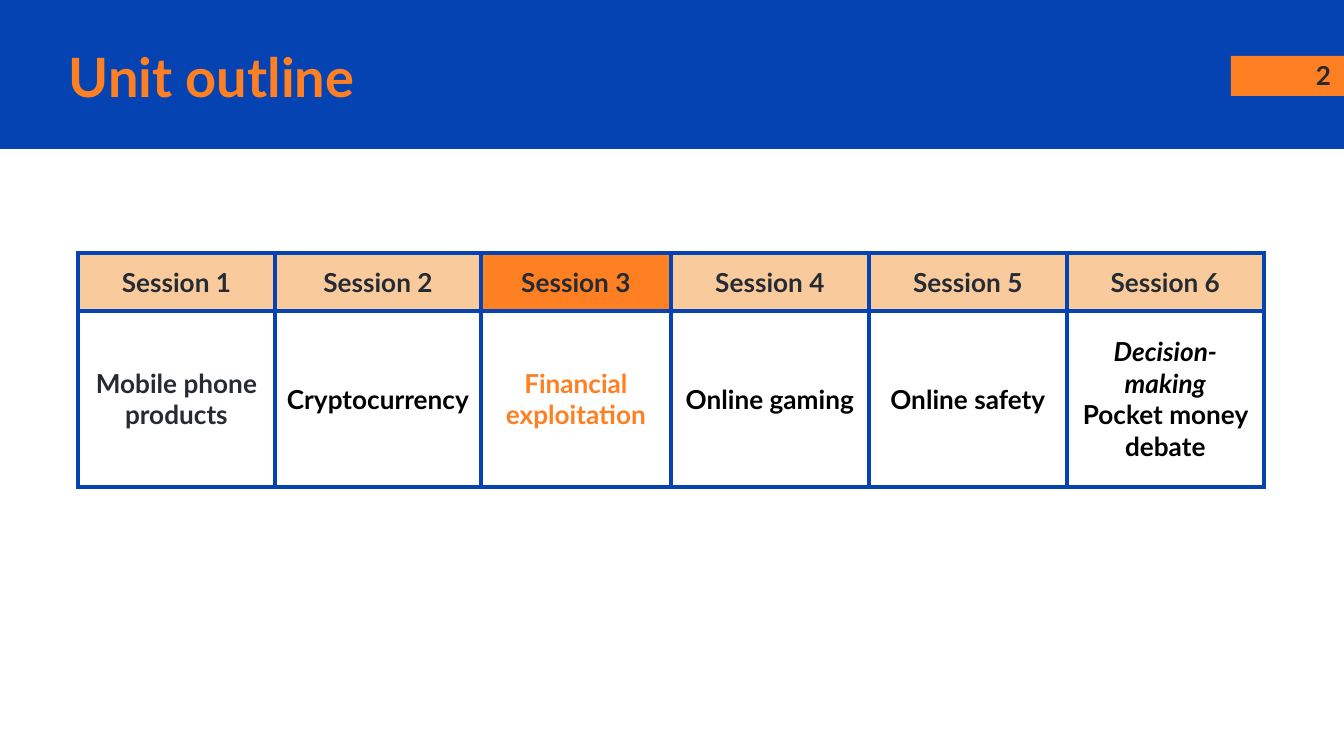
from lxml import etree
from pptx import Presentation
from pptx import util as u
from pptx.dml.color import RGBColor
from pptx.enum import shapes, text
from pptx.oxml import ns

COLORS = {
    "blue": "0543B3",
    "orange": "FF8022",
    "peach": "F9CB9C",
    "ink": "262A33",
    "black": "000000",
}
SESSIONS = [
    ("Session 1", "peach", ["Mobile phone products"], "ink"),
    ("Session 2", "peach", ["Cryptocurrency"], "black"),
    ("Session 3", "orange", ["Financial exploitation"], "orange"),
    ("Session 4", "peach", ["Online gaming"], "black"),
    ("Session 5", "peach", ["Online safety"], "black"),
    ("Session 6", "peach", ["Decision-", "making", "Pocket money debate"], "black"),
]
ITALIC_LINES = {"Decision-", "making"}
SCALE = 9144000 / 1344


def px(length):
    """Turn px into EMU."""
    return u.Emu(round(length * SCALE))


def rgb(name):
    """Return the named colour."""
    return RGBColor.from_string(COLORS[name])


def write(frame, lines, size, color, align):
    """Write lines as bold paragraphs in a text frame."""
    frame.word_wrap = True
    for index, line in enumerate(lines):
        paragraph = frame.paragraphs[0] if index == 0 else frame.add_paragraph()
        paragraph.text = line
        paragraph.alignment = align
        font = paragraph.font
        font.name, font.size, font.bold = "Lato", u.Pt(size), True
        font.italic = line in ITALIC_LINES
        font.color.rgb = rgb(color)


def set_margins(target, margin):
    """Give a text frame or a cell equal margins."""
    target.margin_left = target.margin_right = px(margin)
    target.margin_top = target.margin_bottom = px(margin)


def add_bar(slide, left, top, width, height, color):
    """Add a plain filled rectangle."""
    bar = slide.shapes.add_shape(
        shapes.MSO_SHAPE.RECTANGLE, px(left), px(top), px(width), px(height))
    bar.shadow.inherit = False
    bar.fill.solid()
    bar.fill.fore_color.rgb = rgb(color)
    bar.line.fill.background()


def add_label(slide, left, top, width, height, words, size, color, align):
    """Add a one-line label centred vertically in its box."""
    label = slide.shapes.add_textbox(px(left), px(top), px(width), px(height))
    frame = label.text_frame
    set_margins(frame, 13)
    frame.vertical_anchor = text.MSO_ANCHOR.MIDDLE
    write(frame, [words], size, color, align)


def add_header(slide, left, top, width, height):
    """Add the band with the title and the page number."""
    add_bar(slide, left, top, width, height, "blue")
    add_bar(slide, left + width - 113, top + 56, 113, 40, "orange")
    add_label(slide, left + width - 81, top + 46, 81, 58, "2", 14, "ink",
              text.PP_ALIGN.RIGHT)
    add_label(slide, left + 56, top + 38, 1137, 75, "Unit outline", 29, "orange",
              text.PP_ALIGN.LEFT)


def add_borders(cell):
    """Draw blue lines on all sides of a cell."""
    properties = cell._tc.get_or_add_tcPr()
    for side in ("a:lnL", "a:lnR", "a:lnT", "a:lnB"):
        line = etree.SubElement(properties, ns.qn(side), w=str(u.Pt(2.25)))
        fill = etree.SubElement(line, ns.qn("a:solidFill"))
        etree.SubElement(fill, ns.qn("a:srgbClr"), val=COLORS["blue"])


def fill_cell(cell, lines, color, margin, fill=None):
    """Set the borders, fill and text of one cell."""
    add_borders(cell)
    if fill:
        cell.fill.solid()
        cell.fill.fore_color.rgb = rgb(fill)
    else:
        cell.fill.background()
    set_margins(cell, margin)
    cell.vertical_anchor = text.MSO_ANCHOR.MIDDLE
    write(cell.text_frame, lines, 14, color, text.PP_ALIGN.CENTER)


def add_sessions(slide, left, top, widths, heights):
    """Add the table of sessions and their topics."""
    table = slide.shapes.add_table(
        len(heights), len(widths), px(left), px(top),
        px(sum(widths)), px(sum(heights))).table
    table.first_row = table.horz_banding = False
    for row, height in zip(table.rows, heights):
        row.height = px(height)
    for index, (name, fill, topic, color) in enumerate(SESSIONS):
        table.columns[index].width = px(widths[index])
        fill_cell(table.cell(0, index), [name], "ink", 13, fill)
        fill_cell(table.cell(1, index), topic, color, 9)


def main():
    """Build and save the slide."""
    deck = Presentation()
    deck.slide_width, deck.slide_height = px(1344), px(756)
    slide = deck.slides.add_slide(deck.slide_layouts[6])
    add_header(slide, 0, 0, 1344, 149)
    add_sessions(slide, 78, 253, [197, 206, 190, 198, 198, 197], [58, 176])
    deck.save("out.pptx")


if __name__ == "__main__":
    main()
